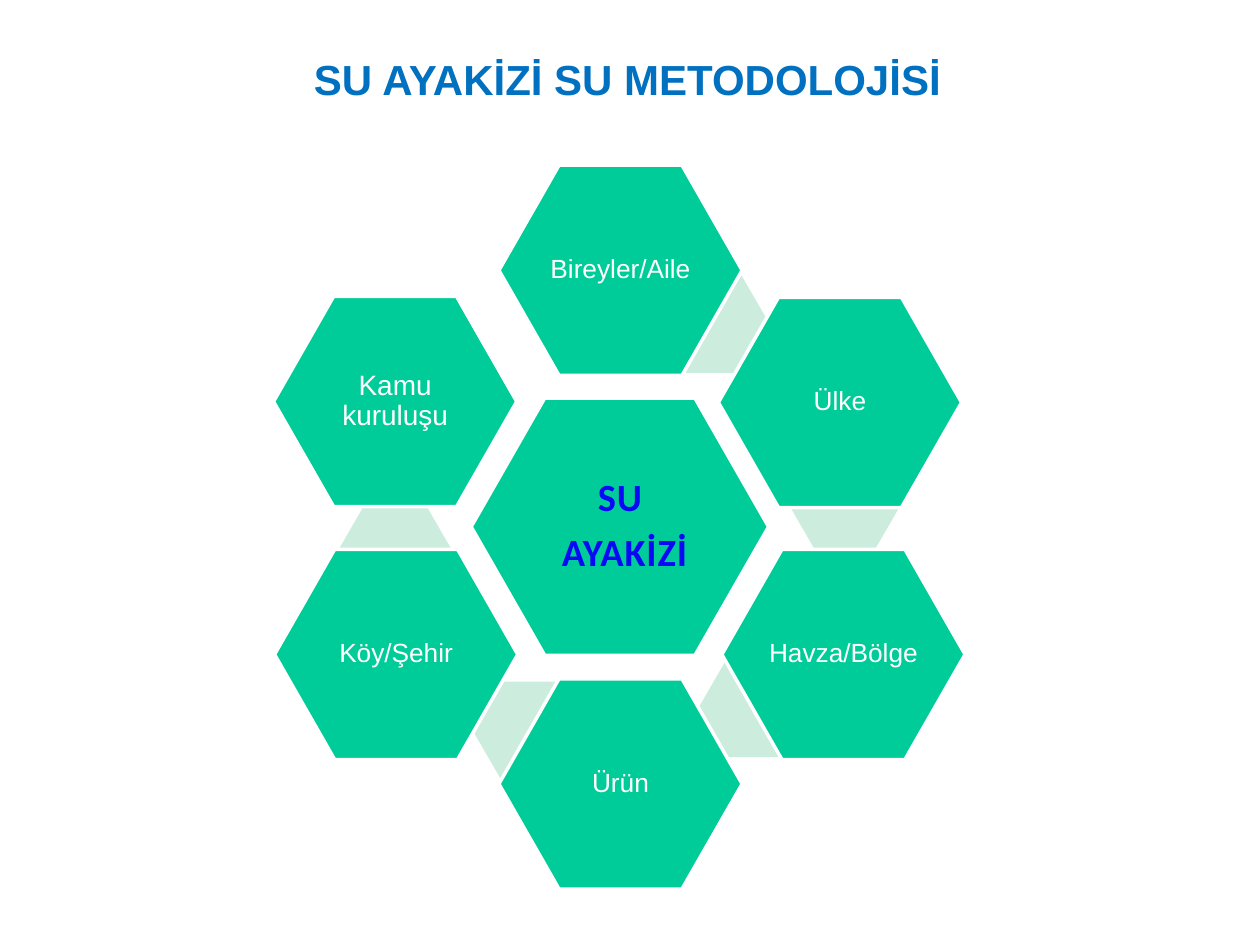
from pptx import Presentation
from pptx.dml.color import RGBColor
from pptx.enum.shapes import MSO_SHAPE
from pptx.enum.text import MSO_ANCHOR, PP_ALIGN
from pptx.util import Pt

HEXAGON = MSO_SHAPE.HEXAGON
CENTER = PP_ALIGN.CENTER
MIDDLE = MSO_ANCHOR.MIDDLE

TITLE = "SU AYAKİZİ SU METODOLOJİSİ"
TITLE_BOX = (101.5, 29.5, 514, 34.6)
TITLE_FONT = {"name": "Arial", "size": Pt(24), "bold": True}
CORE = ["SU", " AYAKİZİ"]
CORE_CENTER, CORE_SIZE = (354.2, 301), (170, 147)
CORE_FONT = {"name": "Calibri", "size": Pt(22), "bold": True}
LEVELS = [
    ("Bireyler/Aile", 354.6, 154.5, 15),
    ("Ülke", 480, 230, 15),
    ("Havza/Bölge", 482, 374, 15),
    ("Ürün", 354.6, 448, 15),
    ("Köy/Şehir", 226.4, 374, 15),
    ("Kamu kuruluşu", 225.8, 229.5, 16),
]
LEVEL_SIZE = (139, 120.2)
LINKS = [(407.9, 185.4), (482.8, 288.4), (430.9, 405), (302, 417.2), (225.8, 313.6)]
LINK_SIZE = (64, 55.4)
GREEN, PALE, WHITE, BLUE, TITLE_BLUE = "00CC99", "CCECDE", "FFFFFF", "0909F6", "0070C0"


def rgb(value):
    return RGBColor.from_string(value)


def write(tf, lines, font, color, spacing, gap=0, tracking=0):
    tf.word_wrap = True
    for i, line in enumerate(lines):
        p = tf.paragraphs[0] if i == 0 else tf.add_paragraph()
        p.alignment = CENTER
        p.line_spacing = spacing
        if i:
            p.space_before = Pt(gap)
        r = p.add_run()
        r.text = line
        for key, value in font.items():
            setattr(r.font, key, value)
        r.font.color.rgb = rgb(color)
        if tracking:
            r.font._element.set("spc", str(tracking))


def hexagon(s, center, size, fill, adj, outlined):
    (x, y), (w, h) = center, size
    sp = s.shapes.add_shape(HEXAGON, Pt(x - w / 2), Pt(y - h / 2), Pt(w), Pt(h))
    sp.shadow.inherit = False
    sp.adjustments[0] = adj
    sp.fill.solid()
    sp.fill.fore_color.rgb = rgb(fill)
    if outlined:
        sp.line.color.rgb = rgb(WHITE)
        sp.line.width = Pt(2)
    else:
        sp.line.fill.background()
    tf = sp.text_frame
    tf.vertical_anchor = MIDDLE
    for side in ("left", "top", "right", "bottom"):
        setattr(tf, "margin_" + side, Pt(1.5))
    return tf


def main():
    """Build the water footprint slide: a core hexagon ringed by six levels."""
    prs = Presentation()
    prs.slide_width, prs.slide_height = Pt(720), Pt(540)
    s = prs.slides.add_slide(prs.slide_layouts[6])
    title = s.shapes.add_textbox(*map(Pt, TITLE_BOX))
    write(title.text_frame, [TITLE], TITLE_FONT, TITLE_BLUE, 0.93)

    core = hexagon(s, CORE_CENTER, CORE_SIZE, GREEN, 0.286, True)
    write(core, CORE, CORE_FONT, BLUE, 0.9, gap=8, tracking=50)
    for center in LINKS:
        hexagon(s, center, LINK_SIZE, PALE, 0.289, False)
    for label, x, y, size in LEVELS:
        tf = hexagon(s, (x, y), LEVEL_SIZE, GREEN, 0.286, True)
        write(tf, [label], {"name": "Arial", "size": Pt(size)}, WHITE, 0.9)
    prs.save("out.pptx")


if __name__ == "__main__":
    main()
